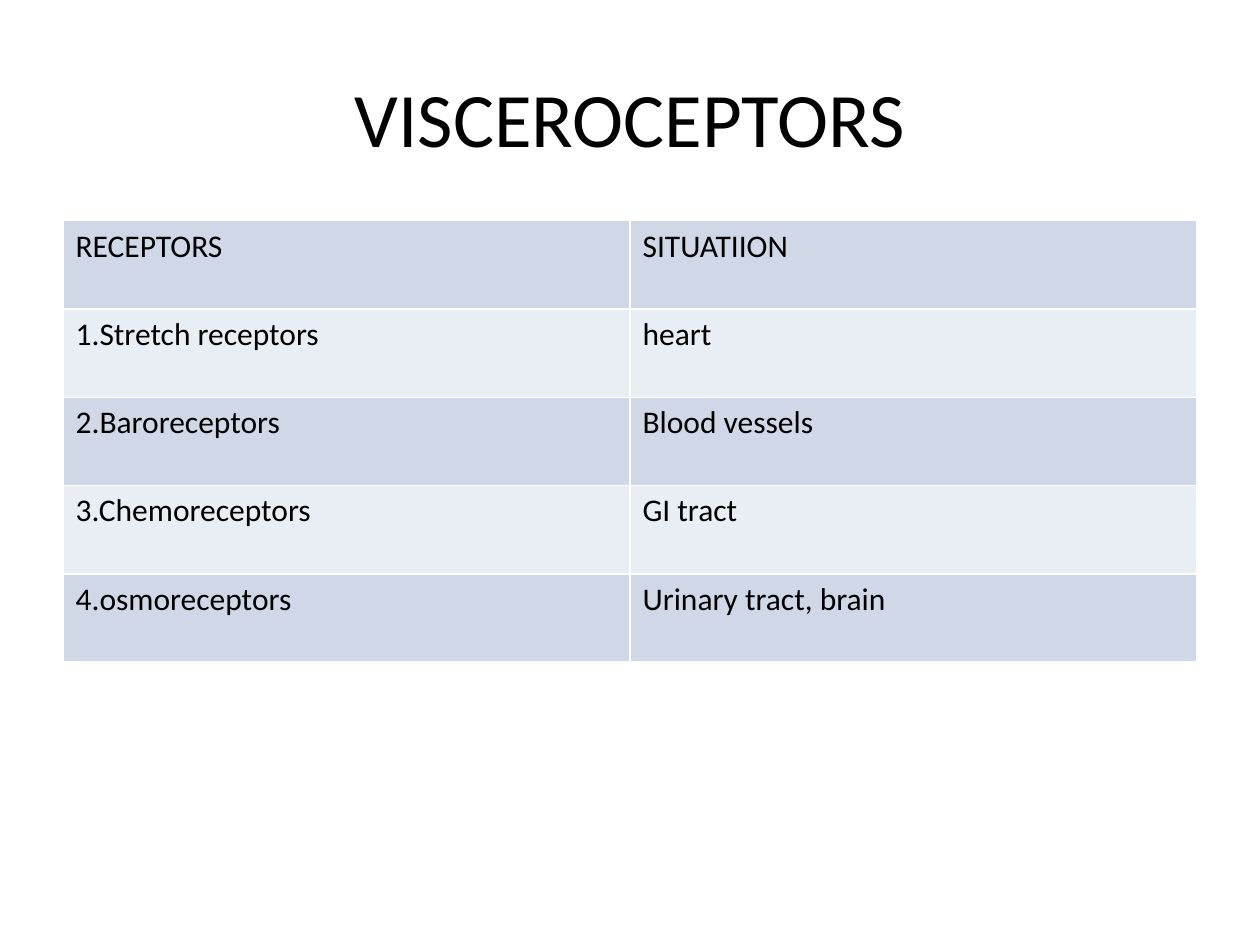
from pptx import Presentation
from pptx.dml.color import RGBColor as Rgb
from pptx.enum.text import MSO_ANCHOR as Anchor, PP_ALIGN as Align
from pptx.oxml import parse_xml
from pptx.oxml.ns import nsdecls
from pptx.util import Cm, Pt

COLORS = {"text": "000000", "dark_band": "D0D8E8", "light_band": "E9EDF4", "border": "FFFFFF"}
FONT = "Calibri"
LEFT, WIDTH = Cm(1.27), Cm(22.86)
ROW_HEIGHT = Cm(1.78)
RECEPTOR_ROWS = [
    ("RECEPTORS", "SITUATIION"),
    ("1.Stretch receptors", "heart"),
    ("2.Baroreceptors", "Blood vessels"),
    ("3.Chemoreceptors", "GI tract"),
    ("4.osmoreceptors", "Urinary tract, brain"),
]


def write_text(frame, text, size, align):
    para = frame.paragraphs[0]
    para.alignment = align
    span = para.add_run()
    span.text = text
    for name, value in {"name": FONT, "size": Pt(size), "bold": False}.items():
        setattr(span.font, name, value)
    span.font.color.rgb = Rgb.from_string(COLORS["text"])


def add_title(page, text):
    box = page.shapes.add_textbox(LEFT, Cm(0.76), WIDTH, Cm(3.18))
    frame = box.text_frame
    for name, value in {"word_wrap": True, "vertical_anchor": Anchor.MIDDLE}.items():
        setattr(frame, name, value)
    write_text(frame, text, 44, Align.CENTER)


def style_cell(cell, fill):
    """Give the cell thin borders on all sides and a solid fill."""
    properties = cell._tc.get_or_add_tcPr()
    for side in ("lnL", "lnR", "lnT", "lnB"):
        properties.append(parse_xml(
            f'<a:{side} {nsdecls("a")} w="{Pt(1)}"><a:solidFill>'
            f'<a:srgbClr val="{COLORS["border"]}"/></a:solidFill></a:{side}>'))
    cell.fill.solid()
    cell.fill.fore_color.rgb = Rgb.from_string(fill)


def add_banded_table(page, rows):
    table = page.shapes.add_table(
        len(rows), len(rows[0]), LEFT, Cm(4.45), WIDTH, ROW_HEIGHT * len(rows)).table
    for name in ("first_row", "horz_banding"):
        setattr(table, name, False)
    bands = (COLORS["dark_band"], COLORS["light_band"])
    for row_index, texts in enumerate(rows):
        for column_index, text in enumerate(texts):
            cell = table.cell(row_index, column_index)
            style_cell(cell, bands[row_index % 2])
            write_text(cell.text_frame, text, 18, Align.LEFT)


def main():
    deck = Presentation()
    deck.slide_width, deck.slide_height = Cm(25.4), Cm(19.05)
    page = deck.slides.add_slide(deck.slide_layouts[6])
    add_title(page, "VISCEROCEPTORS")
    add_banded_table(page, RECEPTOR_ROWS)
    deck.save("out.pptx")


if __name__ == "__main__":
    main()
